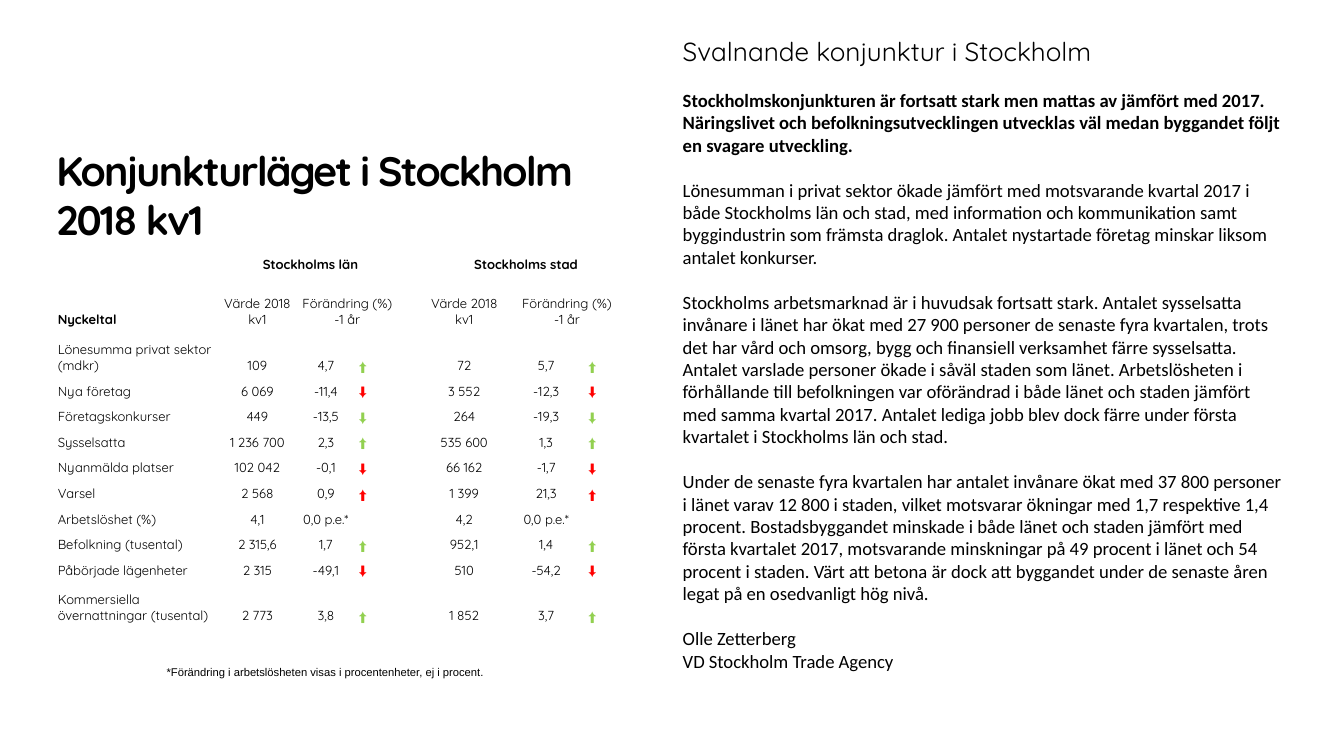
from pptx import Presentation
from pptx.dml.color import RGBColor
from pptx.enum.text import MSO_ANCHOR as ANCHOR, PP_ALIGN as ALIGN
from pptx.util import Inches, Pt

COLORS = {"text": "000000", "good": "92D050", "bad": "FF0000"}


def add_run(p, text, size, font="Quicksand", bold=False, color="text"):
    r = p.add_run()
    r.text = text
    for name, value in {"size": Pt(size), "name": font, "bold": bold}.items():
        setattr(r.font, name, value)
    r.font.color.rgb = RGBColor.from_string(COLORS[color])
    return r


def add_box(s, left, top, width, height, inset, wrap=True):
    tf = s.shapes.add_textbox(*map(Inches, (left, top, width, height))).text_frame
    tf.word_wrap = wrap
    for side in ("left", "top", "right", "bottom"):
        setattr(tf, f"margin_{side}", Inches(inset))
    return tf


# Widescreen 16:9
prs = Presentation()
prs.slide_width = Inches(10)
prs.slide_height = Inches(10) * 9 // 16
s = prs.slides.add_slide(prs.slide_layouts[6])

# Title
p = add_box(s, 0.42, 1.08, 6.21, 0.8, 0).paragraphs[0]
for i, line in enumerate(["Konjunkturläget i Stockholm", "2018 kv1"]):
    if i:
        p.add_line_break()
    r = add_run(p, line, 22, bold=True)
    r.font._element.set("spc", "-90")

# Footnote
p = add_box(s, 1.24, 4.72, 2.4, 0.35, 0, wrap=False).paragraphs[0]
p.line_spacing = Pt(24)
add_run(p, "*Förändring i arbetslösheten visas i procentenheter, ej i procent.", 6, "Arial")

# Key figures: label, then value and change for county and city, arrow, arrow colour
VALUE, CHANGE = "Värde 2018 kv1", "Förändring (%)\n-1 år"
head = [
    ["", "Stockholms län", "", "", "", "Stockholms stad", "", ""],
    ["Nyckeltal", VALUE, CHANGE, "", "", VALUE, CHANGE, ""],
    [""] * 8,
]
figures = [
    ("Lönesumma privat sektor (mdkr)", "109", "4,7", "72", "5,7", "⬆", "good"),
    ("Nya företag", "6 069", "-11,4", "3 552", "-12,3", "⬇", "bad"),
    ("Företagskonkurser", "449", "-13,5", "264", "-19,3", "⬇", "good"),
    ("Sysselsatta", "1 236 700", "2,3", "535 600", "1,3", "⬆", "good"),
    ("Nyanmälda platser", "102 042", "-0,1", "66 162", "-1,7", "⬇", "bad"),
    ("Varsel", "2 568", "0,9", "1 399", "21,3", "⬆", "bad"),
    ("Arbetslöshet (%)", "4,1", "0,0 p.e.*", "4,2", "0,0 p.e.*", "", "text"),
    ("Befolkning (tusental)", "2 315,6", "1,7", "952,1", "1,4", "⬆", "good"),
    ("Påbörjade lägenheter", "2 315", "-49,1", "510", "-54,2", "⬇", "bad"),
    ("Kommersiella övernattningar (tusental)", "2 773", "3,8", "1 852", "3,7", "⬆", "good"),
]
rows = head + [[name, v1, c1, arrow, "", v2, c2, arrow]
               for name, v1, c1, v2, c2, arrow, _ in figures]
tone = ["text"] * len(head) + [f[-1] for f in figures]
widths = [1.22, 0.55, 0.47, 0.32, 0.17, 0.61, 0.61, 0.31]

table = s.shapes.add_table(len(rows), len(widths), Inches(0.42), Inches(1.87),
                           Inches(4.27), Inches(2.78)).table
table.first_row = table.horz_banding = False
for col, width in zip(table.columns, widths):
    col.width = Inches(width)
tall_rows, tall = (3, 12), 0.34
small = (2.78 - tall * len(tall_rows)) / (len(rows) - len(tall_rows))
for i, row in enumerate(table.rows):
    row.height = Inches(tall if i in tall_rows else small)

cell_format = {"margin_left": Inches(0.01), "margin_right": Inches(0.01),
               "margin_top": Inches(0.01), "margin_bottom": 0}
for i, row in enumerate(rows):
    for j, text in enumerate(row):
        cell = table.cell(i, j)
        cell.fill.background()
        for name, value in cell_format.items():
            setattr(cell, name, value)
        cell.vertical_anchor = ANCHOR.MIDDLE if i == 0 else ANCHOR.BOTTOM
        arrow = j in (3, 7)
        for k, line in enumerate(text.split("\n")):
            p = cell.text_frame.add_paragraph() if k else cell.text_frame.paragraphs[0]
            p.font.size = Pt(7)
            p.alignment = ALIGN.LEFT if j == 0 or arrow else ALIGN.CENTER
            if line:
                add_run(p, line, 7, "Arial" if arrow else "Quicksand",
                        i == 0 or line == "Nyckeltal", tone[i] if arrow else "text")

# Merged header cells
for r1, c1, r2, c2 in [(0, 1, 0, 3), (0, 5, 0, 7), (1, 0, 2, 0), (1, 1, 2, 1),
                       (1, 2, 2, 3), (1, 5, 2, 5), (1, 6, 2, 7)]:
    table.cell(r1, c1).merge(table.cell(r2, c2))

# Commentary
tf = add_box(s, 5, 0.18, 4.62, 5.11, 0.08)
add_run(tf.paragraphs[0], "Svalnande konjunktur i Stockholm", 14)
body = [
    "Stockholmskonjunkturen är fortsatt stark men mattas av jämfört med 2017. Näringslivet och "
    "befolkningsutvecklingen utvecklas väl medan byggandet följt en svagare utveckling.",
    "Lönesumman i privat sektor ökade jämfört med motsvarande kvartal 2017 i både Stockholms län "
    "och stad, med information och kommunikation samt byggindustrin som främsta draglok. Antalet "
    "nystartade företag minskar liksom antalet konkurser.",
    "Stockholms arbetsmarknad är i huvudsak fortsatt stark. Antalet sysselsatta invånare i länet "
    "har ökat med 27 900 personer de senaste fyra kvartalen, trots det har vård och omsorg, bygg "
    "och finansiell verksamhet färre sysselsatta. Antalet varslade personer ökade i såväl staden "
    "som länet. Arbetslösheten i förhållande till befolkningen var oförändrad i både länet och "
    "staden jämfört med samma kvartal 2017. Antalet lediga jobb blev dock färre under första "
    "kvartalet i Stockholms län och stad.",
    "Under de senaste fyra kvartalen har antalet invånare ökat med 37 800 personer i länet varav "
    "12 800 i staden, vilket motsvarar ökningar med 1,7 respektive 1,4 procent. Bostadsbyggandet "
    "minskade i både länet och staden jämfört med första kvartalet 2017, motsvarande minskningar "
    "på 49 procent i länet och 54 procent i staden. Värt att betona är dock att byggandet under "
    "de senaste åren legat på en osedvanligt hög nivå.",
    "Olle Zetterberg",
    "VD Stockholm Trade Agency",
]
for i, text in enumerate(body):
    p = tf.add_paragraph()
    p.space_before = Pt(0 if i == len(body) - 1 else 12)
    add_run(p, text, 10, "Calibri", bold=i == 0)

prs.save("out.pptx")
